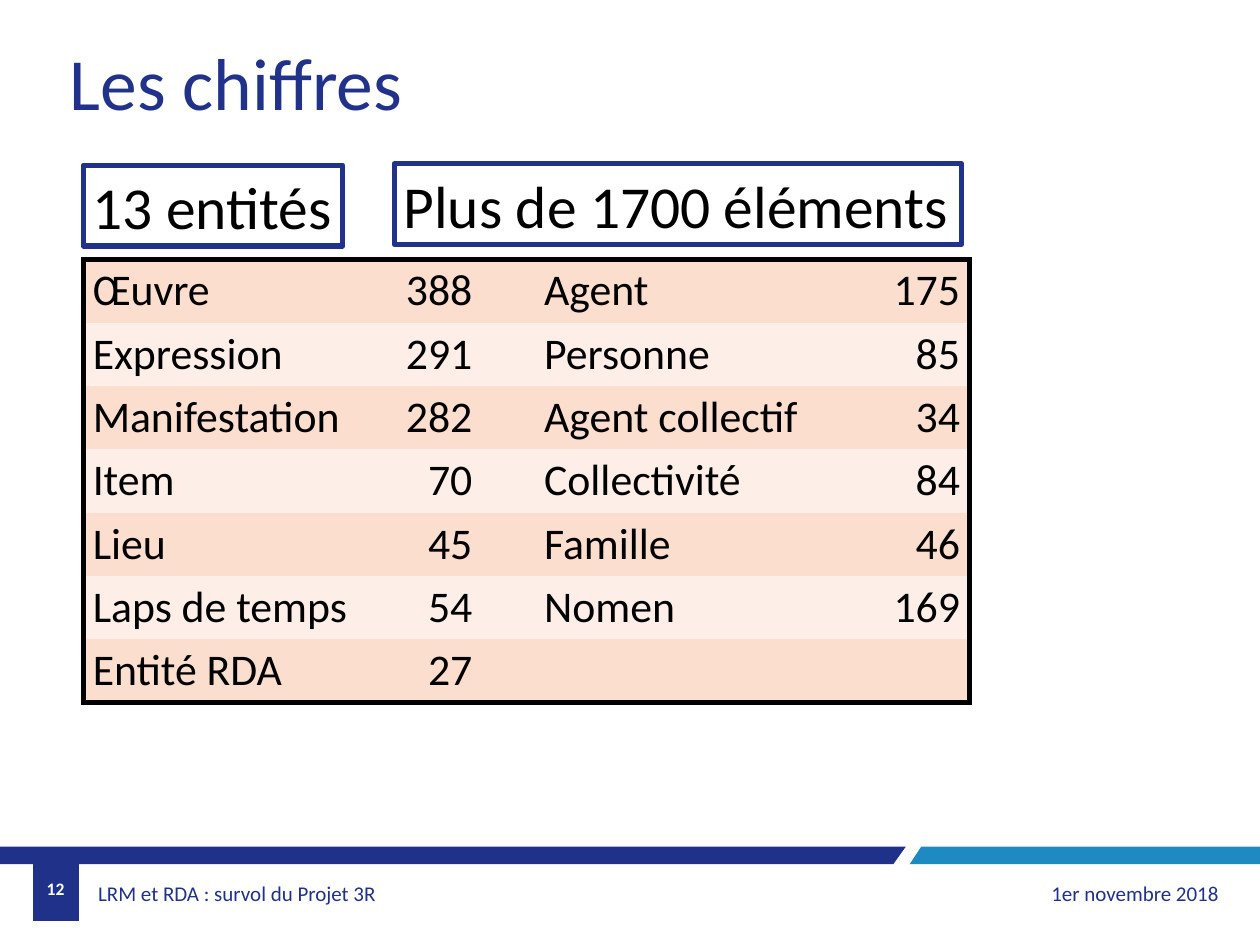
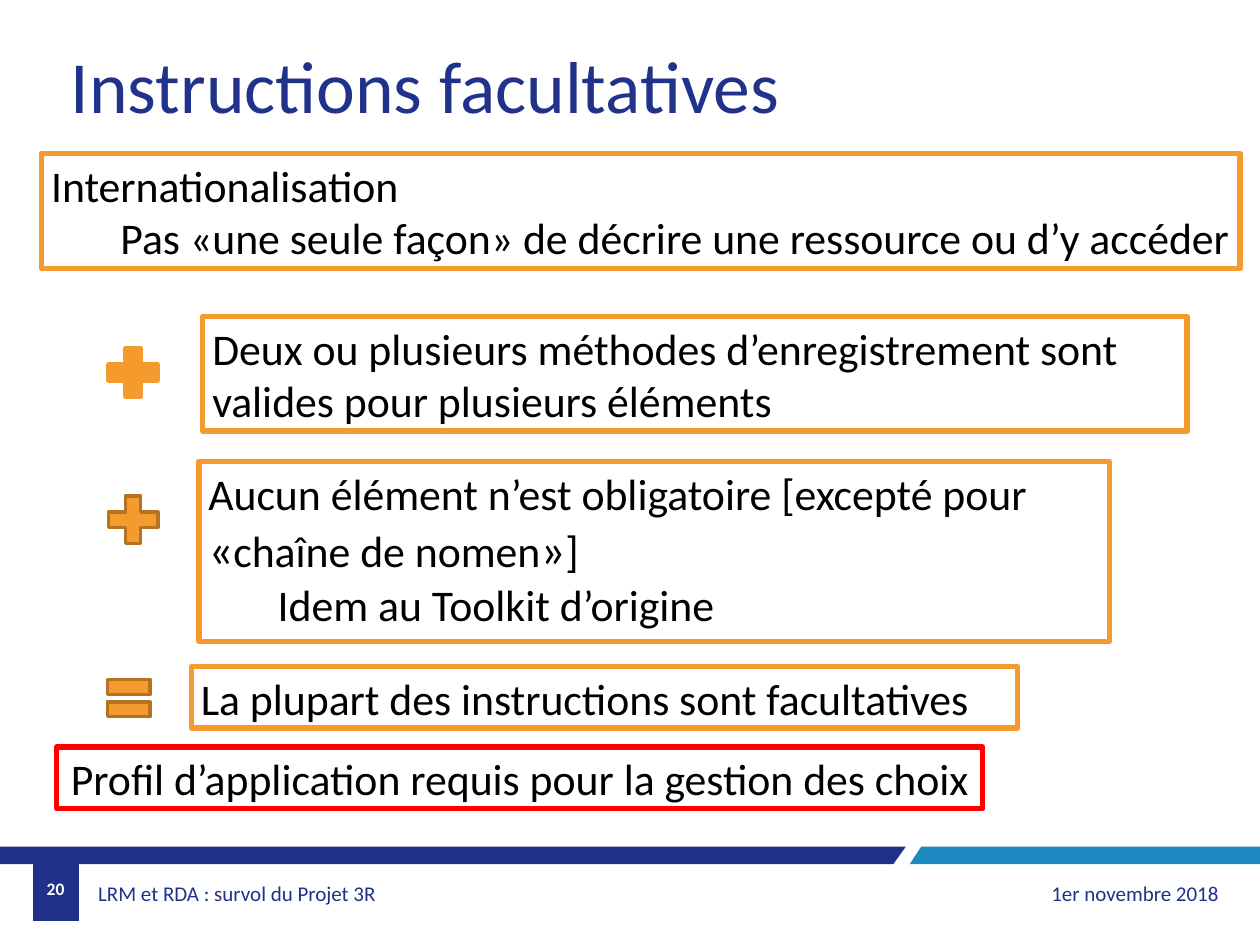
from dataclasses import dataclass
from typing import Any

import lxml.etree
import pptx
import pptx.dml.color
import pptx.enum.shapes
import pptx.enum.text
import pptx.oxml
import pptx.oxml.ns
import pptx.util

Cm = pptx.util.Cm
Pt = pptx.util.Pt
RGBColor = pptx.dml.color.RGBColor
ALIGN = pptx.enum.text.PP_ALIGN
ANCHOR = pptx.enum.text.MSO_ANCHOR
SHAPE = pptx.enum.shapes.MSO_SHAPE

# Shared look
FONT = "Calibri"
NAVY = RGBColor(0x20, 0x31, 0x89)
TITLE_BLUE = RGBColor(0x21, 0x32, 0x8A)
SKY = RGBColor(0x1D, 0x8B, 0xC1)
ORANGE = RGBColor(0xF5, 0x9B, 0x2D)
BROWN = RGBColor(0xB5, 0x73, 0x21)
RED = RGBColor(0xFF, 0x00, 0x00)
BLACK = RGBColor(0x00, 0x00, 0x00)
WHITE = RGBColor(0xFF, 0xFF, 0xFF)
PEACH = RGBColor(0xFB, 0xDE, 0xCD)
PALE_PEACH = RGBColor(0xFD, 0xEF, 0xE8)

BODY_SIZE = 25
INDENT = 1.4
INSETS = (0.19, 0.1)
FOOTER_INSETS = (0.13, 0.08)

Area = tuple[float, float, float, float]  # left, top, width, height in cm


@dataclass(frozen=True)
class Span:
    text: str
    size: float = BODY_SIZE


@dataclass(frozen=True)
class Line:
    spans: tuple[Span, ...]
    indent: float = 0


@dataclass(frozen=True)
class FramedBox:
    area: Area
    lines: tuple[Line, ...]
    color: RGBColor = ORANGE
    align: Any = ALIGN.LEFT
    wrap: bool = True


@dataclass(frozen=True)
class Sign:
    kind: Any
    area: Area
    line_color: RGBColor = BROWN
    line_width: float = 2


@dataclass(frozen=True)
class Band:
    color: RGBColor
    points: tuple[tuple[float, float], ...]


@dataclass(frozen=True)
class FooterText:
    text: str
    area: Area
    size: float = 12
    color: RGBColor = NAVY
    bold: bool = False
    align: Any = ALIGN.LEFT
    insets: tuple[float, float] = INSETS


BANDS = (
    Band(NAVY, ((0, 17.07), (18.26, 17.07), (18.01, 17.42), (0, 17.42))),
    Band(SKY, ((18.57, 17.07), (25.4, 17.07), (25.4, 17.42), (18.34, 17.42))),
    Band(NAVY, ((0.66, 17.07), (1.6, 17.07), (1.6, 18.57), (0.66, 18.57))),
)


def line(text: str, size: float = BODY_SIZE, indent: float = 0) -> Line:
    return Line((Span(text, size),), indent)


def place(shape: Any, area: Area) -> None:
    shape.left, shape.top, shape.width, shape.height = map(Cm, area)


def add_text(para: Any, text: str, *, size: float, color: RGBColor = BLACK,
             bold: bool = False, align: Any = ALIGN.LEFT) -> None:
    para.alignment = align
    span = para.add_run()
    span.text = text
    span.font.name = FONT
    span.font.size = Pt(size)
    span.font.bold = bold
    span.font.color.rgb = color


def prepare_frame(frame: Any, anchor: Any = ANCHOR.TOP, wrap: bool = True,
                  insets: tuple[float, float] = INSETS) -> None:
    frame.word_wrap = wrap
    frame.auto_size = pptx.enum.text.MSO_AUTO_SIZE.NONE
    frame.vertical_anchor = anchor
    frame.margin_left = frame.margin_right = Cm(insets[0])
    frame.margin_top = frame.margin_bottom = Cm(insets[1])


def add_footer_text(page: Any, item: FooterText) -> None:
    box = page.shapes.add_textbox(*map(Cm, item.area))
    prepare_frame(box.text_frame, ANCHOR.MIDDLE, insets=item.insets)
    add_text(box.text_frame.paragraphs[0], item.text, size=item.size,
             color=item.color, bold=item.bold, align=item.align)


def add_band(page: Any, band: Band) -> None:
    points = [(Cm(x), Cm(y)) for x, y in band.points]
    builder = page.shapes.build_freeform(*points[0])
    builder.add_line_segments(points[1:], close=True)
    shape = builder.convert_to_shape()
    shape.shadow.inherit = False
    shape.fill.solid()
    shape.fill.fore_color.rgb = band.color
    shape.line.fill.background()


def add_page(deck: Any, title: str, title_area: Area, number: int) -> Any:
    page = deck.slides.add_slide(deck.slide_layouts.get_by_name("Title Only"))
    for band in BANDS:
        add_band(page, band)
    footers = (
        FooterText("LRM et RDA : survol du Projet 3R", (1.85, 17.53, 9.8, 0.97),
                   insets=FOOTER_INSETS),
        FooterText("1er novembre 2018", (18.26, 17.53, 6.5, 0.97), align=ALIGN.RIGHT),
        FooterText(str(number), (0.66, 17.42, 0.92, 0.97), 10, WHITE, True, ALIGN.CENTER),
    )
    for item in footers:
        add_footer_text(page, item)
    heading = page.shapes.title
    place(heading, title_area)
    prepare_frame(heading.text_frame)
    add_text(heading.text_frame.paragraphs[0], title, size=42, color=TITLE_BLUE)
    return page


def add_framed_box(page: Any, item: FramedBox) -> None:
    box = page.shapes.add_shape(SHAPE.RECTANGLE, *map(Cm, item.area))
    box.shadow.inherit = False
    box.fill.background()
    box.line.color.rgb = item.color
    box.line.width = Pt(3)
    frame = box.text_frame
    prepare_frame(frame, wrap=item.wrap)
    for index, text_line in enumerate(item.lines):
        para = frame.add_paragraph() if index else frame.paragraphs[0]
        if text_line.indent:
            para._p.get_or_add_pPr().set("marL", str(Cm(text_line.indent)))
        for span in text_line.spans:
            add_text(para, span.text, size=span.size, align=item.align)


def add_sign(page: Any, sign: Sign) -> None:
    shape = page.shapes.add_shape(sign.kind, *map(Cm, sign.area))
    shape.shadow.inherit = False
    shape.fill.solid()
    shape.fill.fore_color.rgb = ORANGE
    shape.line.color.rgb = sign.line_color
    shape.line.width = Pt(sign.line_width)


def set_borders(cell: Any, black_sides: dict[str, bool]) -> None:
    """Draw the sides marked true in black and hide the others."""
    qn = pptx.oxml.ns.qn
    properties = cell._tc.get_or_add_tcPr()
    for position, (side, visible) in enumerate(black_sides.items()):
        border = lxml.etree.Element(qn(f"a:ln{side}"), w=str(Pt(3)))
        if visible:
            fill = lxml.etree.SubElement(border, qn("a:solidFill"))
            lxml.etree.SubElement(fill, qn("a:srgbClr"), val=str(BLACK))
        else:
            lxml.etree.SubElement(border, qn("a:noFill"))
        properties.insert(position, border)


def add_count_table(page: Any, rows: list[tuple[str, ...]]) -> None:
    widths = (5.87, 2.16, 1.07, 7.01, 1.75)
    row_height = 1.24
    number_columns = (1, 4)
    last_row, last_column = len(rows) - 1, len(widths) - 1
    table = page.shapes.add_table(
        len(rows), len(widths), Cm(1.68), Cm(5.23),
        Cm(sum(widths)), Cm(row_height * len(rows))).table
    table.first_row = table.horz_banding = False
    for column, width in zip(table.columns, widths):
        column.width = Cm(width)
    for r, values in enumerate(rows):
        table.rows[r].height = Cm(row_height)
        for c, value in enumerate(values):
            cell = table.cell(r, c)
            cell.margin_left = cell.margin_right = Cm(INSETS[0])
            cell.margin_top = cell.margin_bottom = Cm(INSETS[1])
            cell.fill.solid()
            cell.fill.fore_color.rgb = PALE_PEACH if r % 2 else PEACH
            set_borders(cell, {"L": c == 0, "R": c == last_column,
                               "T": r == 0, "B": r == last_row})
            if value:
                add_text(cell.text_frame.paragraphs[0], value, size=BODY_SIZE,
                         align=ALIGN.RIGHT if c in number_columns else ALIGN.LEFT)


def build_figures_page(deck: Any) -> None:
    page = add_page(deck, "Les chiffres", (1.22, 0.64, 9.86, 2.24), 12)
    add_framed_box(page, FramedBox((1.68, 3.33, 5.23, 1.63), (line("13 entités", 34),),
                                   TITLE_BLUE, wrap=False))
    add_framed_box(page, FramedBox((7.95, 3.3, 11.43, 1.63),
                                   (line("Plus de 1700 éléments", 34),), TITLE_BLUE))
    add_count_table(page, [
        ("Œuvre", "388", "", "Agent", "175"),
        ("Expression", "291", "", "Personne", "85"),
        ("Manifestation", "282", "", "Agent collectif", "34"),
        ("Item", "70", "", "Collectivité", "84"),
        ("Lieu", "45", "", "Famille", "46"),
        ("Laps de temps", "54", "", "Nomen", "169"),
        ("Entité RDA", "27", "", "", ""),
    ])


def build_instructions_page(deck: Any) -> None:
    page = add_page(deck, "Instructions facultatives", (1.24, 0.71, 14.81, 1.98), 20)
    # Statements
    mandatory = Line((
        Span("Aucun élément n’est obligatoire [excepté pour "), Span("«", 28),
        Span("chaîne de nomen"), Span("»", 28), Span("]")))
    boxes = (
        FramedBox((0.84, 3.1, 24.16, 2.31), (
            line("Internationalisation"),
            line("Pas «une seule façon» de décrire une ressource ou d’y accéder",
                 indent=INDENT))),
        FramedBox((4.09, 6.38, 19.84, 2.31), (
            line("Deux ou plusieurs méthodes d’enregistrement sont valides "
                 "pour plusieurs éléments"),)),
        FramedBox((4.01, 9.3, 18.36, 3.63), (
            mandatory, line("Idem au Toolkit d’origine", indent=INDENT))),
        FramedBox((3.86, 13.44, 16.66, 1.24), (
            line("La plupart des instructions sont facultatives"),)),
        FramedBox((1.14, 15.06, 18.67, 1.24), (
            line("Profil d’application requis pour la gestion des choix"),),
            RED, ALIGN.CENTER, wrap=False),
    )
    for box in boxes:
        add_framed_box(page, box)
    # Plus and equals signs
    for sign in (
        Sign(SHAPE.MATH_PLUS, (2.01, 6.86, 1.35, 1.3), ORANGE, 3),
        Sign(SHAPE.MATH_PLUS, (2.01, 9.83, 1.35, 1.3)),
        Sign(SHAPE.MATH_EQUAL, (2.01, 13.44, 1.17, 1.27)),
    ):
        add_sign(page, sign)


def main() -> None:
    deck = pptx.Presentation()
    deck.slide_width, deck.slide_height = Cm(25.4), Cm(19.05)
    build_figures_page(deck)
    build_instructions_page(deck)
    deck.save("out.pptx")


if __name__ == "__main__":
    main()
